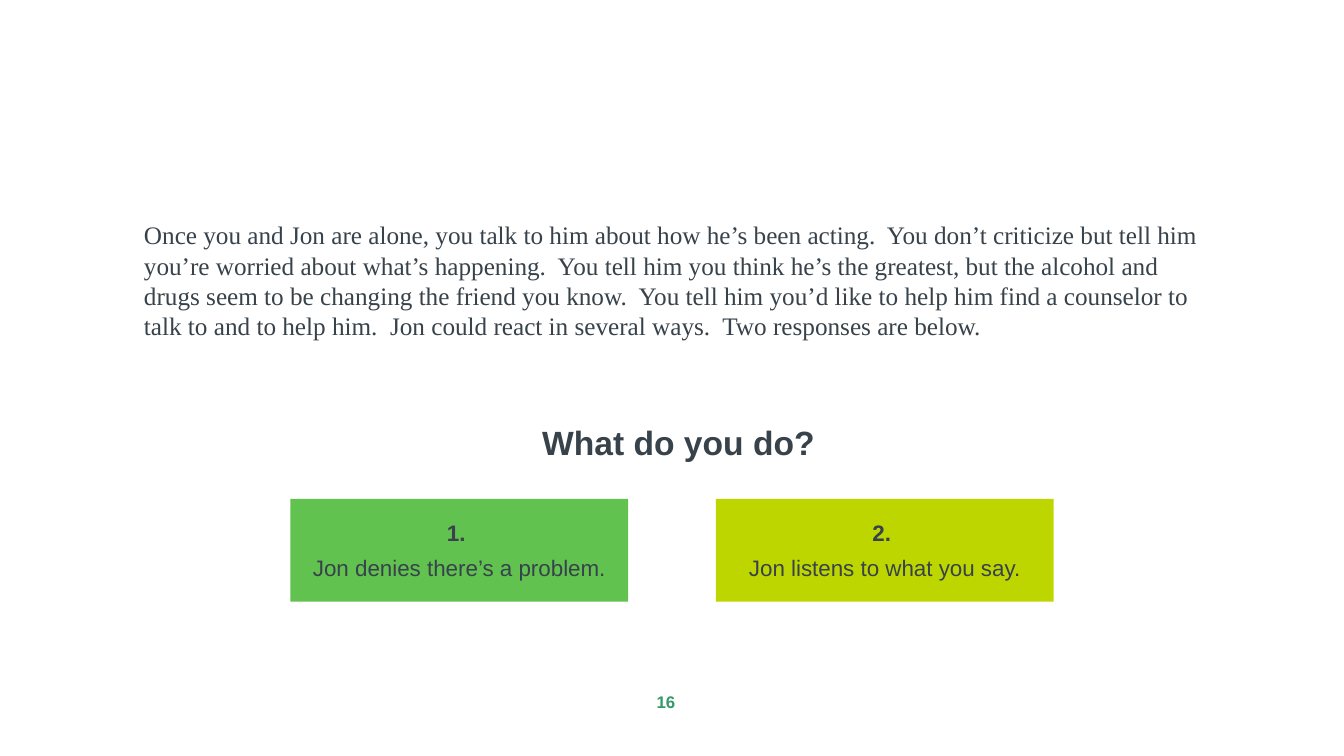
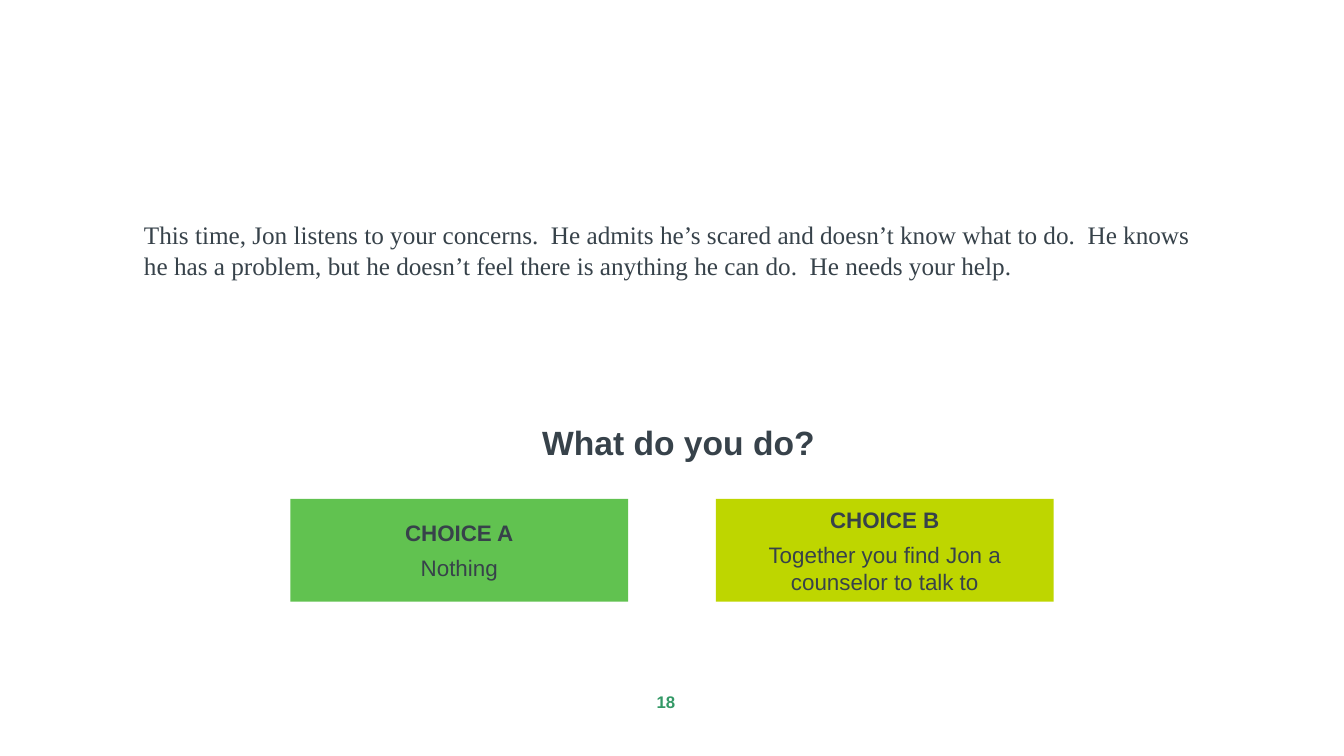
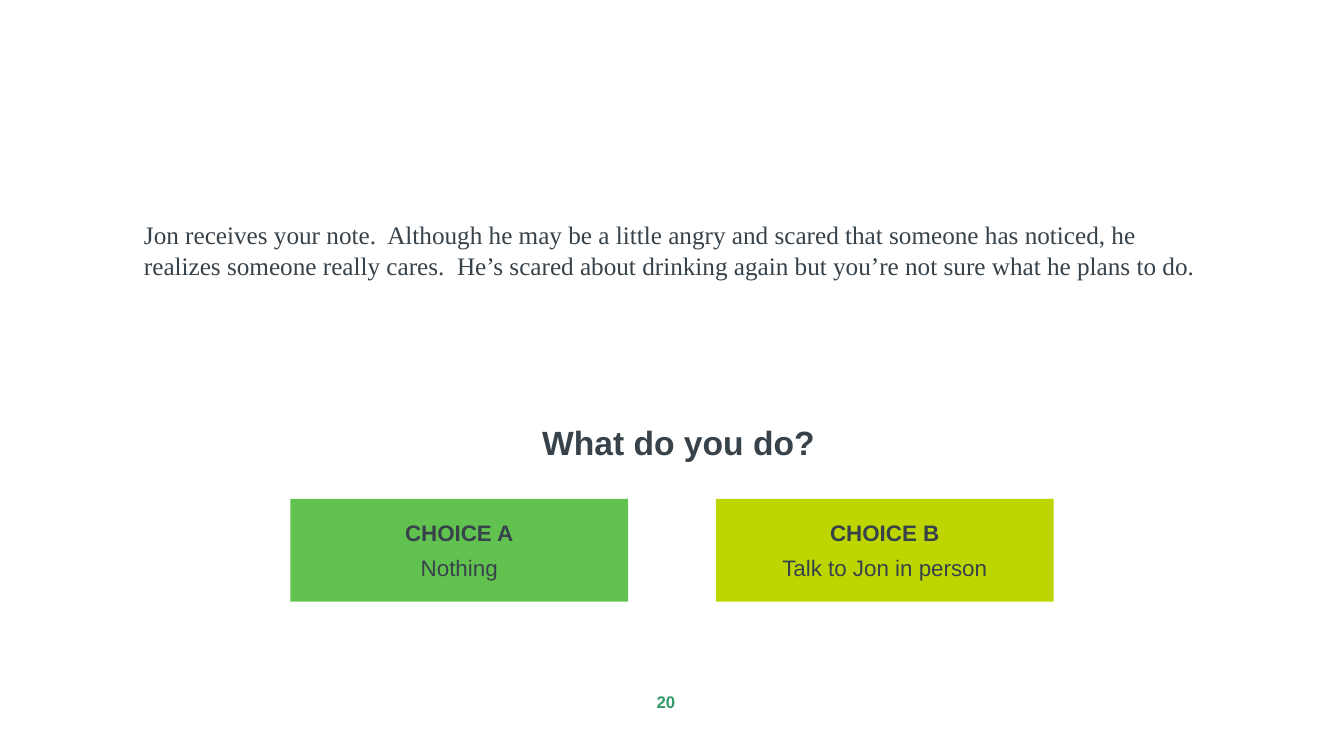
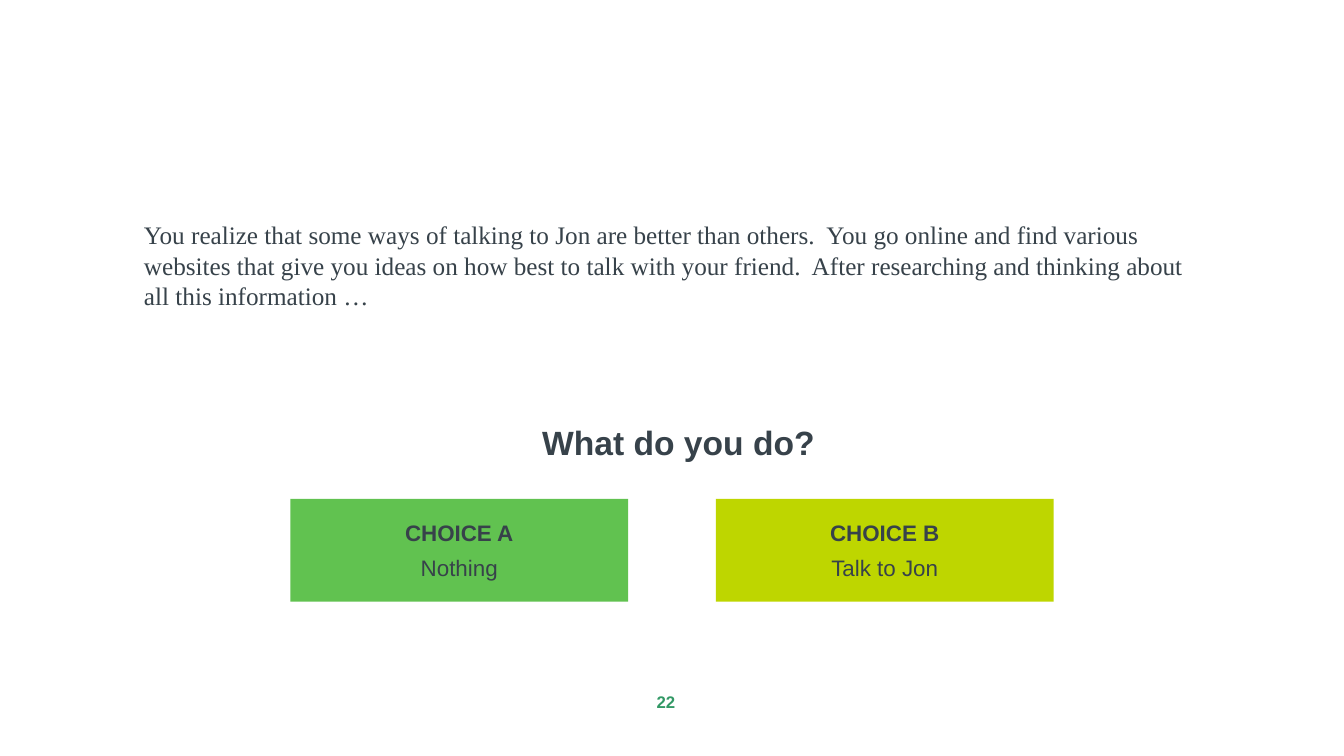
from pptx import Presentation, util as u
from pptx.dml.color import RGBColor
from pptx.enum import shapes, text

# Content: story, lines it fills, the two answers
ASK = "What do you do?"
FIRST, STEP = 16, 2  # page numbers
SCENES = [
    ("Once you and Jon are alone, you talk to him about how he’s been acting.  "
     "You don’t criticize but tell him you’re worried about what’s happening.  "
     "You tell him you think he’s the greatest, but the alcohol and drugs seem "
     "to be changing the friend you know.  You tell him you’d like to help him "
     "find a counselor to talk to and to help him.  Jon could react in several "
     "ways.  Two responses are below.", 4,
     [("1. ", "Jon denies there’s a problem."),
      ("2. ", "Jon listens to what you say.")]),
    ("This time, Jon listens to your concerns.  He admits he’s scared and "
     "doesn’t know what to do.  He knows he has a problem, but he doesn’t feel "
     "there is anything he can do.  He needs your help.", 2,
     [("CHOICE A", "Nothing"),
      ("CHOICE B", "Together you find Jon a counselor to talk to")]),
    ("Jon receives your note.  Although he may be a little angry and scared "
     "that someone has noticed, he realizes someone really cares.  He’s scared "
     "about drinking again but you’re not sure what he plans to do.", 2,
     [("CHOICE A", "Nothing"), ("CHOICE B", "Talk to Jon in person")]),
    ("You realize that some ways of talking to Jon are better than others.  "
     "You go online and find various websites that give you ideas on how best "
     "to talk with your friend.  After researching and thinking about all this "
     "information …", 3,
     [("CHOICE A", "Nothing"), ("CHOICE B", "Talk to Jon")]),
]


class Theme:
    ink, page = "37424A", "339966"
    fills = ["61C250", "BED600"]
    sans, serif = "Arial", "Times New Roman"
    small, label, body, head = 12, 16, 18, 24


# Layout in inches
WIDE, HIGH = 13.33, 7.5
LEFT, SPAN = 1.33, 10.8
LINE, PAD = 0.3, 0.11
CARD_X, CARD_Y, CARD_W, CARD_H, GAP = 2.88, 4.95, 3.35, 1.02, 0.87

MID = text.PP_ALIGN.CENTER


def write(shape, rows, size, font=Theme.sans, color=Theme.ink, align=MID,
          mid=False, side=0.1):
    """Fill a shape with rows of (words, bold)."""
    frame = shape.text_frame
    frame.word_wrap = True
    frame.margin_left = frame.margin_right = u.Inches(side)
    frame.vertical_anchor = (text.MSO_ANCHOR.MIDDLE if mid
                             else text.MSO_ANCHOR.TOP)
    for i, (words, bold) in enumerate(rows):
        para = frame.add_paragraph() if i else frame.paragraphs[0]
        para.text = words
        para.alignment = align
        if i:
            para.space_before = u.Pt(6)
        para.font.name, para.font.size = font, u.Pt(size)
        para.font.bold = bold
        para.font.color.rgb = RGBColor.from_string(color)


def label(slide, box, words, bold, size, **style):
    shape = slide.shapes.add_textbox(*map(u.Inches, box))
    write(shape, [(words, bold)], size, **style)


def card(slide, col, name, words):
    box = (CARD_X + col * (CARD_W + GAP), CARD_Y, CARD_W, CARD_H)
    shape = slide.shapes.add_shape(shapes.MSO_SHAPE.RECTANGLE,
                                   *map(u.Inches, box))
    shape.shadow.inherit = False
    shape.fill.solid()
    shape.fill.fore_color.rgb = RGBColor.from_string(Theme.fills[col])
    shape.line.fill.background()
    write(shape, [(name, True), (words, False)], Theme.label, mid=True)


def main():
    deck = Presentation()
    deck.slide_width, deck.slide_height = u.Inches(WIDE), u.Inches(HIGH)
    for i, (story, lines, picks) in enumerate(SCENES):
        slide = deck.slides.add_slide(deck.slide_layouts[6])
        # Page number
        label(slide, (6.39, 6.76, 0.43, 0.41), str(FIRST + STEP * i), True,
              Theme.small, color=Theme.page, mid=True, side=0)
        # Story and question
        label(slide, (LEFT, 2.13, SPAN, PAD + LINE * lines), story, False,
              Theme.body, font=Theme.serif, align=text.PP_ALIGN.LEFT)
        label(slide, (LEFT, 4.14, SPAN, 0.81), ASK, True, Theme.head)
        # Answers
        for col, pick in enumerate(picks):
            card(slide, col, *pick)
    deck.save("out.pptx")


if __name__ == "__main__":
    main()
